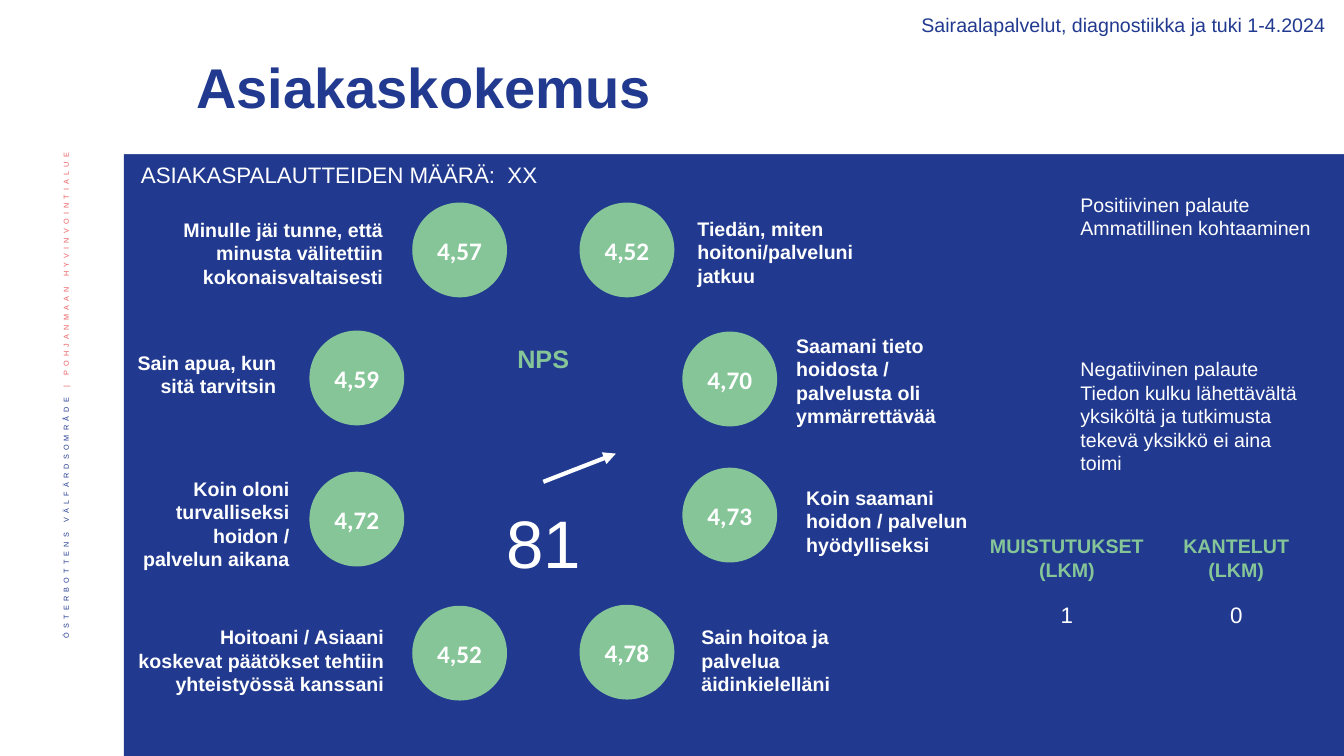
from lxml import etree
from pptx import Presentation
from pptx import util as u
from pptx.dml.color import RGBColor
from pptx.enum import shapes, text
from pptx.oxml import ns

PX = 9144
COLORS = {"navy": "213A8F", "green": "85C598", "coral": "EB5C5F", "white": "FFFFFF"}
LEFT, CENTER, RIGHT = text.PP_ALIGN.LEFT, text.PP_ALIGN.CENTER, text.PP_ALIGN.RIGHT
CIRCLE = 94

SCORES = [
    ("4,57", (409, 201), "Minulle jäi tunne, että minusta välitettiin kokonaisvaltaisesti", (161, 211, 229, 81), RIGHT),
    ("4,59", (307, 328), "Sain apua, kun sitä tarvitsin", (123, 343, 161, 57), RIGHT),
    ("4,72", (307, 468), "Koin oloni turvalliseksi hoidon / palvelun aikana", (123, 468, 174, 104), RIGHT),
    ("4,52", (409, 601), "Hoitoani / Asiaani koskevat päätökset tehtiin yhteistyössä kanssani", (123, 615, 268, 81), RIGHT),
    ("4,52", (575, 201), "Tiedän, miten hoitoni/palveluni jatkuu", (682, 210, 192, 81), LEFT),
    ("4,70", (677, 329), "Saamani tieto hoidosta / palvelusta oli ymmärrettävää", (780, 326, 192, 104), LEFT),
    ("4,73", (677, 464), "Koin saamani hoidon / palvelun hyödylliseksi", (790, 477, 201, 81), LEFT),
    ("4,78", (575, 600), "Sain hoitoa ja palvelua äidinkielelläni", (686, 615, 185, 81), LEFT),
]
COUNTS = [("MUISTUTUKSET (LKM)", "1", 967), ("KANTELUT (LKM)", "0", 1135)]
FEEDBACK = [
    ("Positiivinen palaute", 0),
    ("Ammatillinen kohtaaminen", 0),
    ("Negatiivinen palaute", 84),
    ("Tiedon kulku lähettävältä yksiköltä ja tutkimusta tekevä yksikkö ei aina toimi", 0),
]


def px(*lengths):
    """Turn px lengths into EMU."""
    return [u.Emu(length * PX) for length in lengths]


def color(name):
    """Look up a named colour."""
    return RGBColor.from_string(COLORS[name])


def add_span(para, words, size, ink, bold=False, font="Arial"):
    """Add one formatted run to a paragraph."""
    span = para.add_run()
    span.text = words
    span.font.size = u.Pt(size)
    span.font.name = font
    span.font.bold = bold
    span.font.color.rgb = color(ink)
    return span


def add_box(page, area):
    """Add an empty wrapping text box."""
    box = page.shapes.add_textbox(*px(*area))
    box.text_frame.word_wrap = True
    return box


def add_label(page, area, words, size, ink="white", bold=False, align=LEFT):
    """Add a text box with a single paragraph."""
    box = add_box(page, area)
    para = box.text_frame.paragraphs[0]
    para.alignment = align
    add_span(para, words, size, ink, bold)
    return box


def add_filled(page, kind, area, fill):
    """Add a flat preset shape without an outline."""
    shape = page.shapes.add_shape(kind, *px(*area))
    shape.shadow.inherit = False
    shape.fill.solid()
    shape.fill.fore_color.rgb = color(fill)
    shape.line.fill.background()
    return shape


def add_score(page, score, corner, words, area, align):
    """Add a score circle and its statement."""
    add_label(page, area, words, 14, bold=True, align=align)
    circle = add_filled(page, shapes.MSO_SHAPE.OVAL, (*corner, CIRCLE, CIRCLE), "green")
    circle.text_frame.vertical_anchor = text.MSO_ANCHOR.MIDDLE
    para = circle.text_frame.paragraphs[0]
    para.alignment = CENTER
    add_span(para, score, 18, "white", True, "Calibri")


def add_side_name(page):
    """Add the vertical organisation name at the left edge."""
    frame = add_box(page, (42, 142, 52, 573)).text_frame
    frame.vertical_anchor = text.MSO_ANCHOR.MIDDLE
    frame._txBody.bodyPr.set("vert", "vert270")
    para = frame.paragraphs[0]
    para.alignment = RIGHT
    para.line_spacing = 0.9
    for words, ink in (("ÖSTERBOTTENS VÄLFÄRDSOMRÅDE ", "navy"), ("| POHJANMAAN HYVINVOINTIALUE", "coral")):
        props = add_span(para, words, 9, ink).font._element
        props.set("baseline", "30000")
        props.set("spc", "300")


def add_arrow(page, start, end):
    """Add a white trend arrow."""
    arrow = page.shapes.add_connector(shapes.MSO_CONNECTOR.STRAIGHT, *px(*start, *end))
    arrow.line.color.rgb = color("white")
    arrow.line.width = u.Pt(3)
    etree.SubElement(arrow.line._get_or_add_ln(), ns.qn("a:tailEnd"), type="triangle")
    etree.SubElement(arrow._element.spPr, ns.qn("a:effectLst"))


def add_feedback(page):
    """Add the positive and negative feedback."""
    frame = add_box(page, (1062, 186, 255, 269)).text_frame
    for index, (words, gap) in enumerate(FEEDBACK):
        para = frame.add_paragraph() if index else frame.paragraphs[0]
        if gap:
            para.space_before = u.Pt(gap)
        add_span(para, words, 14, "white")


def main():
    """Build the customer experience slide."""
    deck = Presentation()
    deck.slide_width, deck.slide_height = u.Emu(12192000), u.Emu(6858000)
    page = deck.slides.add_slide(deck.slide_layouts[6])

    add_side_name(page)
    add_filled(page, shapes.MSO_SHAPE.RECTANGLE, (123, 0, 1211, 750), "navy")
    add_filled(page, shapes.MSO_SHAPE.RECTANGLE, (115, 0, 1219, 153), "white")

    title = add_label(page, (185, 47, 1020, 85), "Asiakaskokemus", 40, "navy", True)
    title.text_frame.vertical_anchor = text.MSO_ANCHOR.MIDDLE
    title.text_frame.paragraphs[0].line_spacing = 0.9
    add_label(page, (730, 8, 595, 34), "Sairaalapalvelut, diagnostiikka ja tuki 1-4.2024", 14, "navy", align=RIGHT)
    add_label(page, (130, 155, 470, 37), "ASIAKASPALAUTTEIDEN MÄÄRÄ:  XX", 16)

    add_label(page, (501, 336, 76, 40), "NPS", 18, "green", True, CENTER)
    add_arrow(page, (539, 478), (611, 450))
    add_label(page, (439, 492, 201, 91), "81", 48, align=CENTER)

    for score in SCORES:
        add_score(page, *score)

    add_feedback(page)
    for heading, count, left in COUNTS:
        add_label(page, (left, 525, 183, 57), heading, 14, "green", True, CENTER)
        add_label(page, (left + 15, 591, 153, 37), count, 16, align=CENTER)

    deck.save("out.pptx")


if __name__ == "__main__":
    main()
